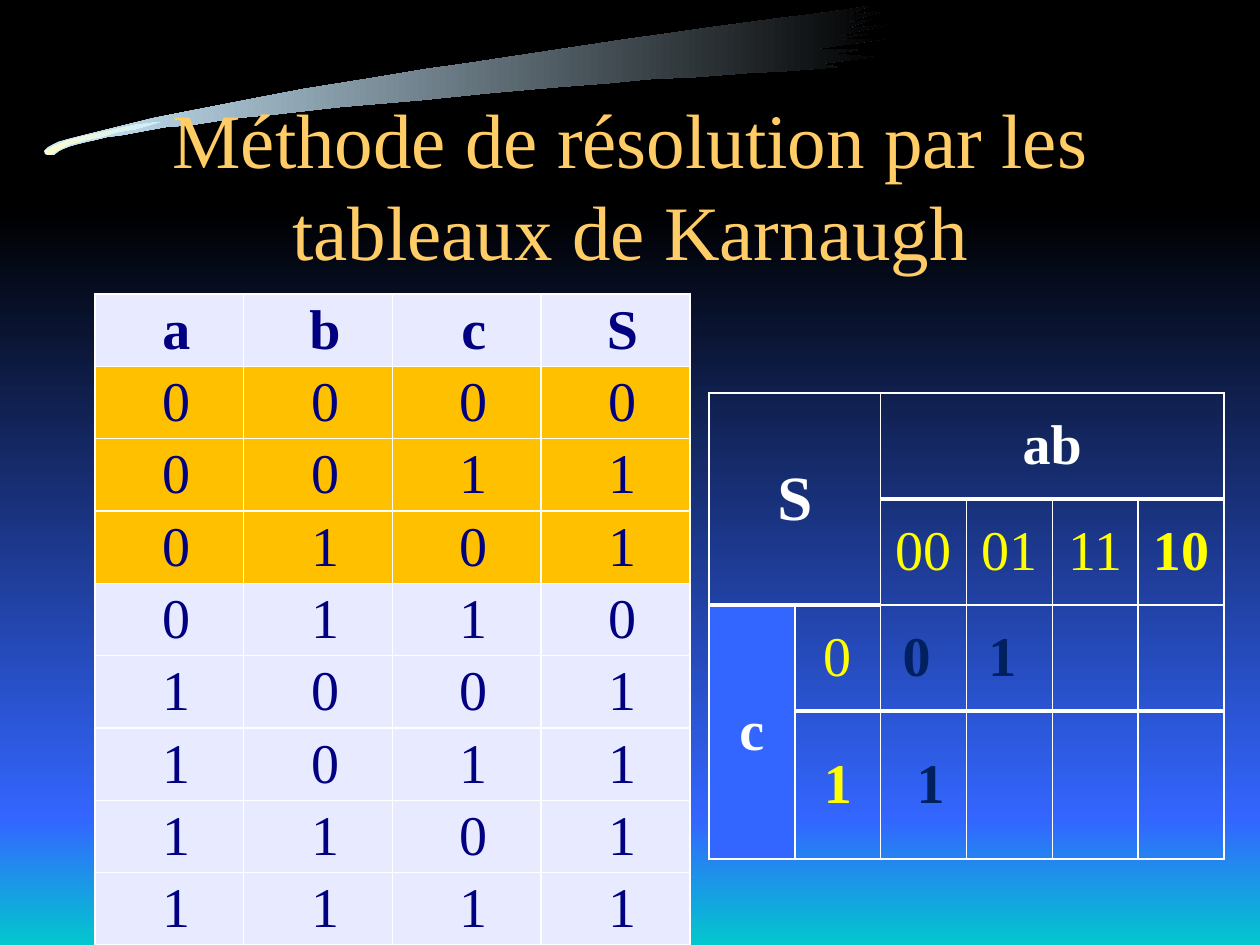
from dataclasses import dataclass
from itertools import product

from lxml import etree
from pptx import Presentation
from pptx.dml.color import RGBColor
from pptx.enum.shapes import MSO_SHAPE
from pptx.enum.text import MSO_ANCHOR, PP_ALIGN
from pptx.oxml.ns import qn
from pptx.util import Emu, Pt

RECTANGLE = MSO_SHAPE.RECTANGLE
MIDDLE = MSO_ANCHOR.MIDDLE
CENTER = PP_ALIGN.CENTER

PX = 914400 / 126
FONT = "Times New Roman"
THIN, HEAVY = 1, 3
COLOURS = {
    "black": "000000", "white": "FFFFFF", "blue": "3366FF", "teal": "00CCCC",
    "ice": "CCECFF", "cream": "FFFFCC", "gold": "FFCC66", "navy": "000080",
    "ink": "002060", "yellow": "FFFF00", "amber": "FFC000", "lavender": "E8EAFF",
}


@dataclass
class Band:
    top: int
    height: int
    start: str
    end: str


@dataclass
class Stroke:
    points: list[tuple[int, int]]
    start: str
    end: str


@dataclass
class Entry:
    text: str = ""
    colour: str = "white"
    bold: bool = True
    size: int = 32
    fill: str | None = None
    rows: int = 1
    cols: int = 1


@dataclass
class Grid:
    left: int
    top: int
    width: int
    row_heights: list[float]
    columns: int
    margin: int
    entries: dict[tuple[int, int], Entry]
    heavy_tops: set[tuple[int, int]]
    indent: int = 0
    space_before: float = 0


BANDS = [Band(210, 609, "black", "blue"), Band(819, 133, "blue", "teal")]

BRUSH = Stroke([
    (838, 67), (819, 64), (874, 57), (832, 54), (858, 50), (815, 49), (886, 39),
    (837, 40), (867, 34), (833, 37), (886, 25), (843, 29), (871, 20), (844, 23),
    (883, 11), (848, 15), (869, 6), (845, 10), (815, 14), (774, 19), (707, 28),
    (665, 34), (622, 40), (536, 53), (496, 59), (470, 63), (427, 69), (373, 78),
    (304, 89), (262, 97), (190, 111), (154, 118), (89, 134), (69, 139), (58, 142),
    (48, 147), (45, 150), (44, 151), (45, 154), (48, 155), (54, 155), (59, 151),
    (63, 149), (68, 147), (74, 145), (86, 142), (95, 140), (107, 137), (123, 135),
    (144, 131), (166, 127), (192, 125), (236, 118), (270, 115), (340, 107),
    (422, 100), (490, 93), (558, 87), (610, 83), (651, 79), (697, 77), (748, 73),
    (788, 71)], "ice", "black")
BRUSH_TIP = Stroke([
    (45, 150), (49, 149), (53, 146), (57, 145), (66, 141), (81, 137), (108, 131),
    (135, 125), (160, 122), (136, 129), (118, 132), (101, 137), (86, 140),
    (68, 145), (59, 150), (55, 152), (52, 155), (48, 155), (45, 154), (45, 152)],
    "cream", "ice")

OUTPUTS = "01101111"
TRUTH_ROWS = ["abcS"] + ["".join(bits) + output for bits, output
                         in zip(product("01", repeat=3), OUTPUTS)]
HIGHLIGHTED = range(1, 4)
TRUTH_TABLE = Grid(
    95, 294, 595, [651 / 9] * 9, 4, 6,
    {(r, c): Entry(text, "navy", r == 0,
                   fill="amber" if r in HIGHLIGHTED else "lavender")
     for r, row in enumerate(TRUTH_ROWS) for c, text in enumerate(row)},
    set(), indent=14, space_before=2.1)

KARNAUGH_MAP = Grid(
    709, 393, 515, [106, 106, 106, 148], 6, 9,
    {
        (0, 0): Entry("S", size=36, rows=2, cols=2),
        (0, 2): Entry("ab", cols=4),
        (1, 2): Entry("00", "yellow", False),
        (1, 3): Entry("01", "yellow", False),
        (1, 4): Entry("11", "yellow", False),
        (1, 5): Entry("10", "yellow"),
        (2, 0): Entry("c", fill="blue", rows=2),
        (2, 1): Entry("0", "yellow", False),
        (2, 2): Entry("0 ", "ink"),
        (2, 3): Entry("1 ", "ink"),
        (3, 1): Entry("1", "yellow"),
        (3, 2): Entry(" 1", "ink"),
    },
    {(1, c) for c in range(2, 6)} | {(2, 0), (2, 1)} | {(3, c) for c in range(1, 6)})


def px(length: float) -> Emu:
    return Emu(round(length * PX))


def rgb(colour: str) -> RGBColor:
    return RGBColor.from_string(COLOURS[colour])


def paint_gradient(shape, start: str, end: str, angle: int) -> None:
    shape.shadow.inherit = False
    shape.line.fill.background()
    shape.fill.gradient()
    shape.fill.gradient_angle = angle
    for stop, colour in zip(shape.fill.gradient_stops, (start, end)):
        stop.color.rgb = rgb(colour)


def draw_band(slide, band: Band) -> None:
    shape = slide.shapes.add_shape(RECTANGLE, px(-1), px(band.top), px(1269), px(band.height))
    paint_gradient(shape, band.start, band.end, 270)


def draw_stroke(slide, stroke: Stroke) -> None:
    builder = slide.shapes.build_freeform(*stroke.points[0], scale=PX)
    builder.add_line_segments(stroke.points[1:], close=True)
    paint_gradient(builder.convert_to_shape(), stroke.start, stroke.end, 0)


def write(paragraph, text: str, colour: str, size: int, bold: bool) -> None:
    paragraph.text = text
    paragraph.alignment = CENTER
    font = paragraph.font
    font.name, font.size, font.bold = FONT, Pt(size), bold
    font.color.rgb = rgb(colour)


def draw_title(slide) -> None:
    title = slide.shapes.add_textbox(px(95), px(105), px(1071), px(157)).text_frame
    title.word_wrap = True
    title.vertical_anchor = MIDDLE
    write(title.paragraphs[0], "Méthode de résolution par les tableaux de Karnaugh",
          "gold", 44, False)


def set_borders(cell, top: int, bottom: int) -> None:
    properties = cell._tc.get_or_add_tcPr()
    for side, width in (("L", THIN), ("R", THIN), ("T", top), ("B", bottom)):
        line = etree.SubElement(properties, qn(f"a:ln{side}"), w=str(Pt(width)))
        fill = etree.SubElement(line, qn("a:solidFill"))
        etree.SubElement(fill, qn("a:srgbClr"), val=COLOURS["white"])


def draw_grid(slide, grid: Grid) -> None:
    rows = len(grid.row_heights)
    table = slide.shapes.add_table(rows, grid.columns, px(grid.left), px(grid.top),
                                   px(grid.width), px(sum(grid.row_heights))).table
    table.first_row = table.horz_banding = False
    for column in table.columns:
        column.width = px(grid.width / grid.columns)
    for row, height in zip(table.rows, grid.row_heights):
        row.height = px(height)

    for r, c in product(range(rows), range(grid.columns)):
        cell = table.cell(r, c)
        entry = grid.entries.get((r, c), Entry())
        below = (r + entry.rows, c)
        set_borders(cell, HEAVY if (r, c) in grid.heavy_tops else THIN,
                    HEAVY if below in grid.heavy_tops else THIN)
        if entry.fill:
            cell.fill.solid()
            cell.fill.fore_color.rgb = rgb(entry.fill)
        else:
            cell.fill.background()
        cell.vertical_anchor = MIDDLE
        cell.margin_left = cell.margin_right = px(grid.margin)
        cell.margin_top = cell.margin_bottom = 0
        if entry.rows * entry.cols > 1:
            cell.merge(table.cell(r + entry.rows - 1, c + entry.cols - 1))
        if entry.text:
            paragraph = cell.text_frame.paragraphs[0]
            write(paragraph, entry.text, entry.colour, entry.size, entry.bold)
            paragraph.space_before = Pt(grid.space_before)
            paragraph._p.get_or_add_pPr().set("marL", str(px(grid.indent)))


def main() -> None:
    deck = Presentation()
    deck.slide_width, deck.slide_height = px(1260), px(945)
    slide = deck.slides.add_slide(deck.slide_layouts[6])
    slide.background.fill.solid()
    slide.background.fill.fore_color.rgb = rgb("black")
    for band in BANDS:
        draw_band(slide, band)
    for stroke in (BRUSH, BRUSH_TIP):
        draw_stroke(slide, stroke)
    draw_title(slide)
    for grid in (TRUTH_TABLE, KARNAUGH_MAP):
        draw_grid(slide, grid)
    deck.save("out.pptx")


if __name__ == "__main__":
    main()
